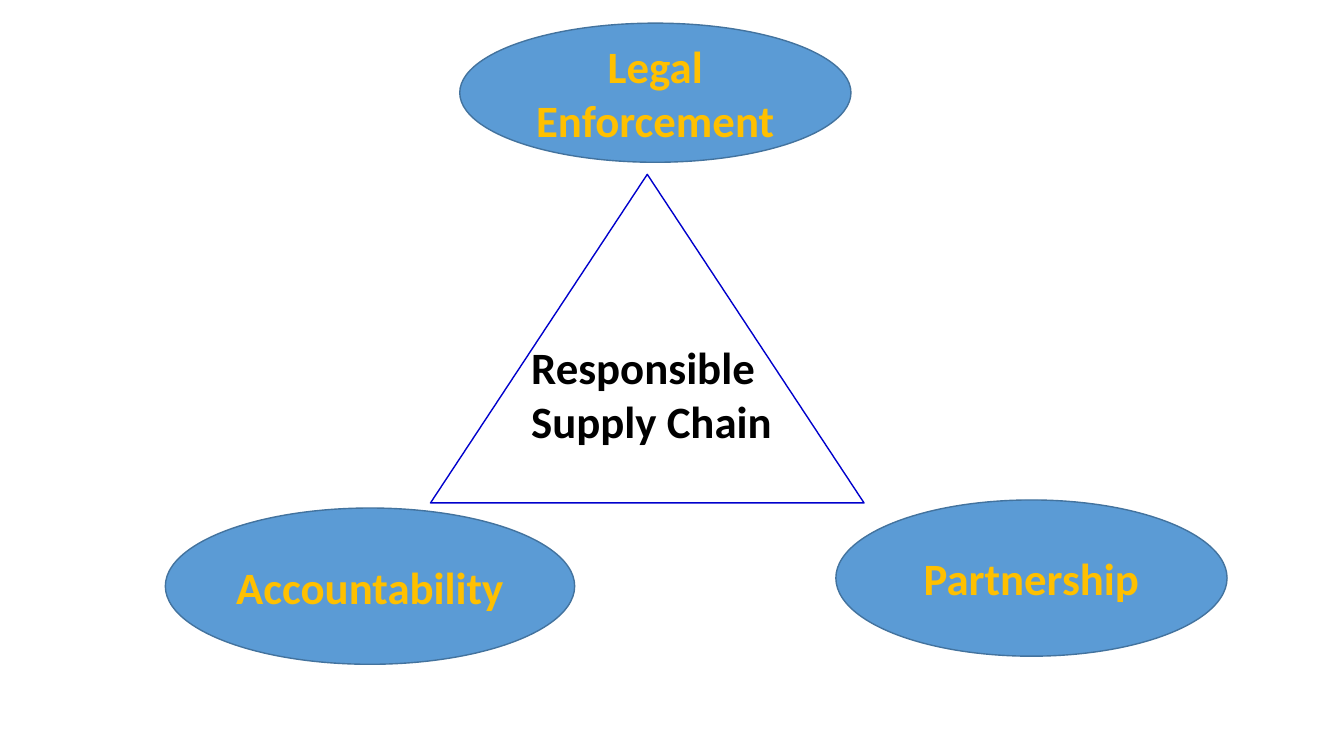
from pptx import Presentation
from pptx import util as u
from pptx.dml.color import RGBColor
from pptx.enum import shapes, text

PX = u.Inches(1) // 100
BLUE = RGBColor(0x5B, 0x9B, 0xD5)
OUTLINE = RGBColor(0x43, 0x73, 0x9E)
NAVY = RGBColor(0x00, 0x00, 0xCC)
GOLD = RGBColor(0xFF, 0xC0, 0x00)
BLACK = RGBColor(0x00, 0x00, 0x00)


def add_outlined(kind, bounds, line_color):
    shape = page.shapes.add_shape(kind, *(PX * length for length in bounds))
    shape.shadow.inherit = False
    shape.line.color.rgb = line_color
    shape.line.width = u.Pt(1)
    return shape


def style(para, color, alignment):
    para.alignment = alignment
    para.font.name = "Calibri"
    para.font.size = u.Pt(32)
    para.font.bold = True
    para.font.color.rgb = color


deck = Presentation()
deck.slide_width = PX * 1333
deck.slide_height = PX * 750
page = deck.slides.add_slide(deck.slide_layouts[6])

triangle = add_outlined(
    shapes.MSO_SHAPE.ISOSCELES_TRIANGLE, (427, 173, 430, 326), NAVY
)
triangle.fill.background()

pillars = [
    ("Accountability", (164, 504, 406, 155)),
    ("Legal Enforcement", (456, 23, 388, 138)),
    ("Partnership", (829, 496, 388, 155)),
]
for label, bounds in pillars:
    pillar = add_outlined(shapes.MSO_SHAPE.OVAL, bounds, OUTLINE)
    pillar.fill.solid()
    pillar.fill.fore_color.rgb = BLUE
    frame = pillar.text_frame
    frame.text = label
    frame.word_wrap = True
    frame.vertical_anchor = text.MSO_ANCHOR.MIDDLE
    style(frame.paragraphs[0], GOLD, text.PP_ALIGN.CENTER)

goal = page.shapes.add_textbox(PX * 517, PX * 332, PX * 261, PX * 118)
goal.text_frame.text = "Responsible\nSupply Chain"
goal.text_frame.word_wrap = False
goal.text_frame.auto_size = text.MSO_AUTO_SIZE.SHAPE_TO_FIT_TEXT
for para in goal.text_frame.paragraphs:
    style(para, BLACK, text.PP_ALIGN.LEFT)

deck.save("out.pptx")
